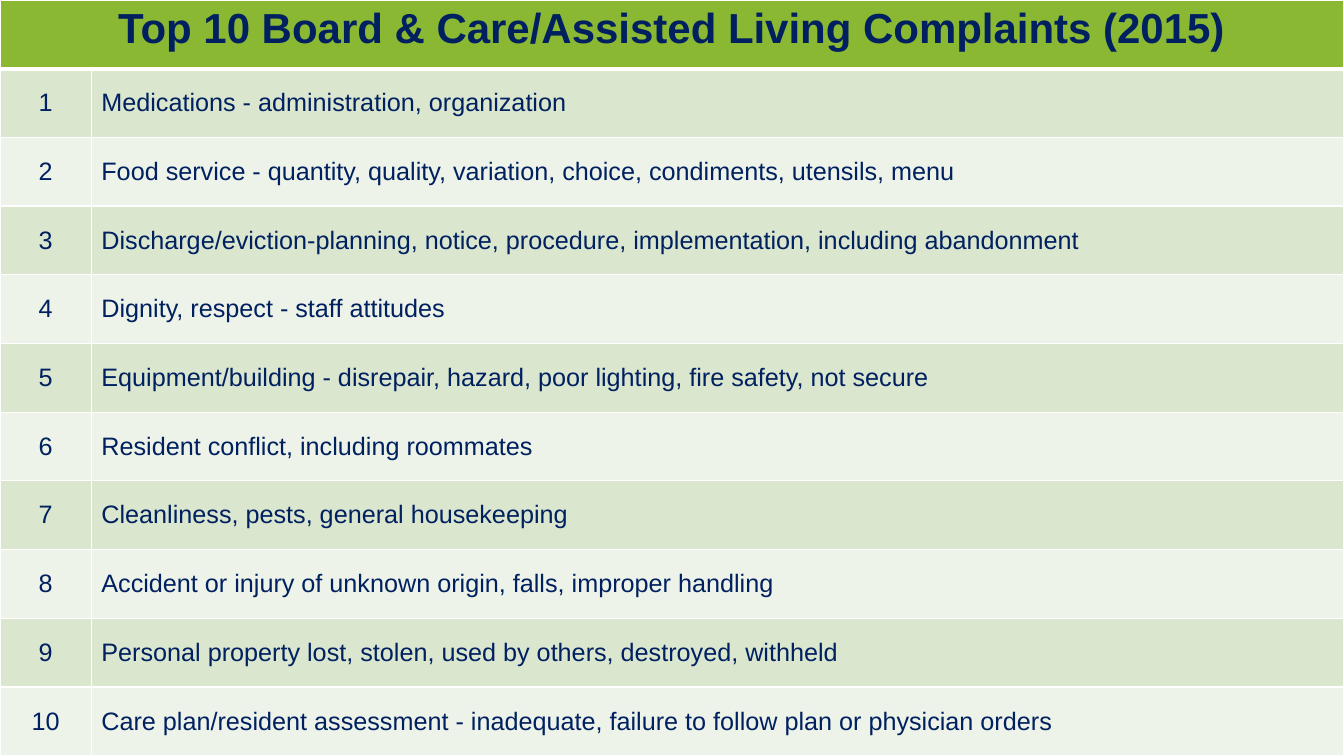
from lxml import etree
from pptx import Presentation
from pptx.dml.color import RGBColor
from pptx.enum.text import MSO_ANCHOR, PP_ALIGN
from pptx.oxml.ns import qn
from pptx.util import Pt

PX = 9525  # EMU per px, 96 px to the inch
SLIDE_W, SLIDE_H = 1280, 720
RANK_W = 87
BLANK_LAYOUT = 6

LEFT, CENTER = PP_ALIGN.LEFT, PP_ALIGN.CENTER
TOP, MIDDLE = MSO_ANCHOR.TOP, MSO_ANCHOR.MIDDLE

NAVY = RGBColor(0x00, 0x20, 0x60)
GREEN = RGBColor(0x8A, 0xB8, 0x33)
WHITE = RGBColor(0xFF, 0xFF, 0xFF)
BANDS = (RGBColor(0xDA, 0xE6, 0xCE), RGBColor(0xED, 0xF3, 0xE8))

HEADING_FONT = {"name": "Arial", "size": Pt(30), "bold": True}
BODY_FONT = {"name": "Arial", "size": Pt(18), "bold": False}
THIN, THICK = Pt(1), Pt(3)

HEADING = "Top 10 Board & Care/Assisted Living Complaints (2015)"
COMPLAINTS = [
    "Medications - administration, organization",
    "Food service - quantity, quality, variation, choice, condiments, utensils, menu",
    "Discharge/eviction-planning, notice, procedure, implementation, including abandonment",
    "Dignity, respect - staff attitudes",
    "Equipment/building - disrepair, hazard, poor lighting, fire safety, not secure",
    "Resident conflict, including roommates",
    "Cleanliness, pests, general housekeeping",
    "Accident or injury of unknown origin, falls, improper handling",
    "Personal property lost, stolen, used by others, destroyed, withheld",
    "Care plan/resident assessment - inadequate, failure to follow plan or physician orders",
]


def px(length):
    return length * PX


def set_borders(cell, top=THIN, bottom=THIN):
    """Draw white rules on all four sides of a cell."""
    properties = cell._tc.get_or_add_tcPr()
    widths = {"a:lnL": THIN, "a:lnR": THIN, "a:lnT": top, "a:lnB": bottom}
    for side, width in widths.items():
        rule = etree.SubElement(properties, qn(side), w=str(width))
        paint = etree.SubElement(rule, qn("a:solidFill"))
        etree.SubElement(paint, qn("a:srgbClr"), val=str(WHITE))


def paint_cell(cell, fill, **rules):
    set_borders(cell, **rules)
    cell.fill.solid()
    cell.fill.fore_color.rgb = fill


def write_cell(cell, text, font_format, align, anchor):
    cell.vertical_anchor = anchor
    paragraph = cell.text_frame.paragraphs[0]
    paragraph.alignment = align
    run = paragraph.add_run()
    run.text = text
    for attribute, value in font_format.items():
        setattr(run.font, attribute, value)
    run.font.color.rgb = NAVY


def add_complaints_table(slide):
    row_count = len(COMPLAINTS) + 1
    table = slide.shapes.add_table(
        row_count, 2, 0, 0, px(SLIDE_W), px(SLIDE_H)).table
    table.columns[0].width = px(RANK_W)
    table.columns[1].width = px(SLIDE_W - RANK_W)
    for row in table.rows:
        row.height = px(SLIDE_H) // row_count

    # Heading across both columns
    heading = table.cell(0, 0)
    heading.merge(table.cell(0, 1))
    for cell in table.rows[0].cells:
        paint_cell(cell, GREEN, bottom=THICK)
    write_cell(heading, HEADING, HEADING_FONT, CENTER, TOP)

    # Ranked complaints in alternating bands
    for rank, complaint in enumerate(COMPLAINTS, start=1):
        entries = ((str(rank), CENTER), (complaint, LEFT))
        for column, (text, align) in enumerate(entries):
            cell = table.cell(rank, column)
            paint_cell(cell, BANDS[(rank - 1) % 2],
                       top=THICK if rank == 1 else THIN)
            write_cell(cell, text, BODY_FONT, align, MIDDLE)


def main():
    presentation = Presentation()
    presentation.slide_width = px(SLIDE_W)
    presentation.slide_height = px(SLIDE_H)
    slide = presentation.slides.add_slide(
        presentation.slide_layouts[BLANK_LAYOUT])
    add_complaints_table(slide)
    presentation.save("out.pptx")


if __name__ == "__main__":
    main()
